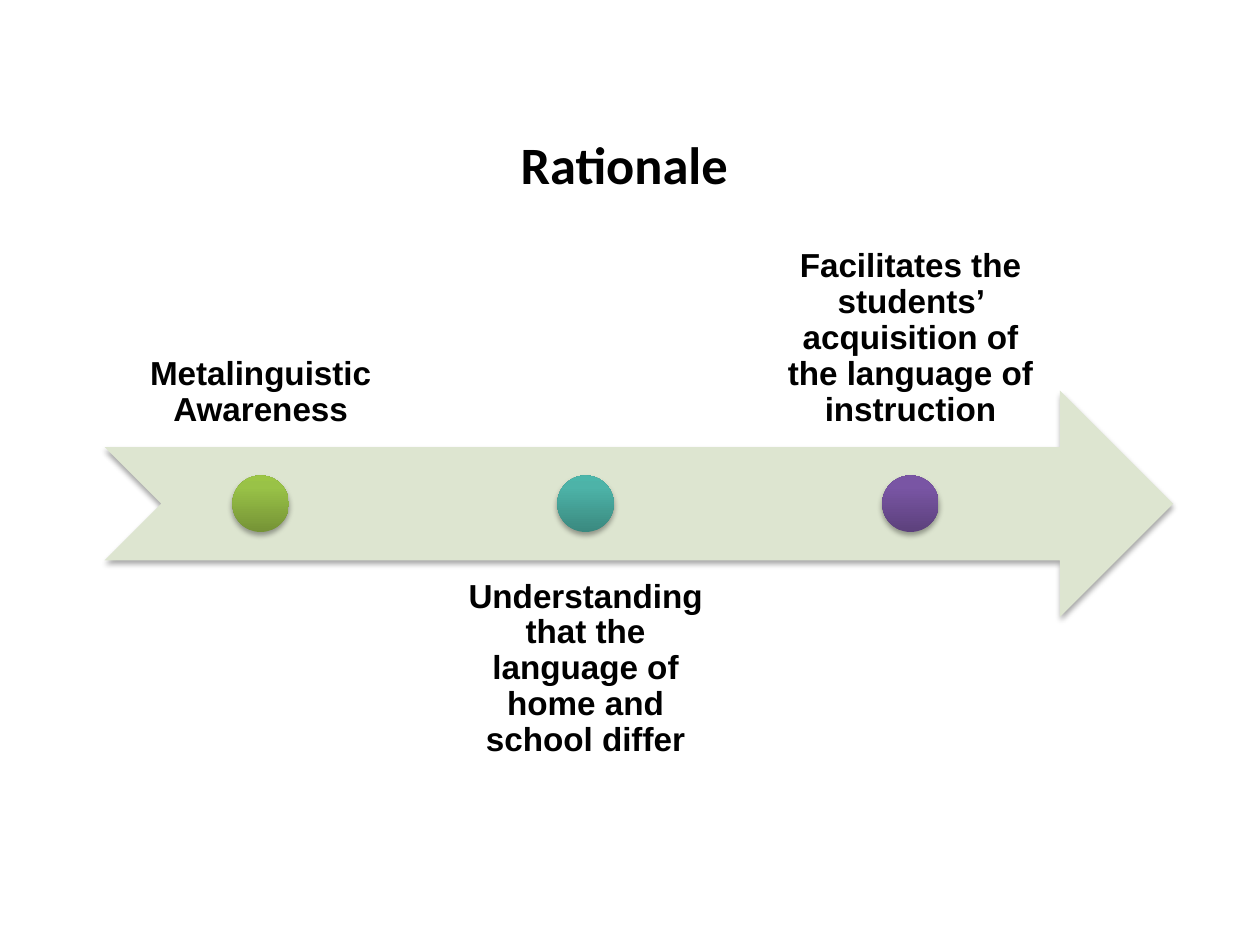
from copy import deepcopy
from dataclasses import dataclass

from lxml import etree
from pptx import Presentation
from pptx.dml.color import RGBColor
from pptx.enum.shapes import MSO_SHAPE as Shape
from pptx.enum.text import MSO_ANCHOR as Anchor, PP_ALIGN as Align
from pptx.oxml import parse_xml
from pptx.oxml.ns import nsdecls, qn
from pptx.util import Cm, Pt

BLACK = RGBColor(0x00, 0x00, 0x00)
ARROW_FILL = RGBColor(0xDD, 0xE5, 0xD0)
GREEN = (RGBColor(0x75, 0x93, 0x36), RGBColor(0x99, 0xC2, 0x47), RGBColor(0x9B, 0xC5, 0x45))
TEAL = (RGBColor(0x3A, 0x89, 0x7F), RGBColor(0x4D, 0xB3, 0xA8), RGBColor(0x4C, 0xB6, 0xAA))
PURPLE = (RGBColor(0x5C, 0x41, 0x7C), RGBColor(0x79, 0x55, 0xA4), RGBColor(0x79, 0x55, 0xA6))
STOPS = (0, 0.8, 1)

ARROW_LEFT, ARROW_TOP, ARROW_W, ARROW_H = 2.11, 7.87, 21.54, 4.57
LABEL_LEFT, LABEL_W, LABEL_H, LABEL_STEP = 2.13, 6.25, 4.57, 6.55
LABEL_ABOVE, LABEL_BELOW = 4.45, 11.3
DOT = 1.14

SHADOW = (
    f'<a:outerShdw {nsdecls("a")} blurRad="{Pt(3.1)}" dist="{Pt(1.8)}" dir="5400000"'
    ' rotWithShape="0"><a:srgbClr val="000000"><a:alpha val="35000"/></a:srgbClr></a:outerShdw>'
)


@dataclass
class Milestone:
    text: str
    colors: tuple[RGBColor, ...]
    above: bool


MILESTONES = [
    Milestone("Metalinguistic Awareness", GREEN, True),
    Milestone("Understanding that the language of home and school differ", TEAL, False),
    Milestone("Facilitates the students’ acquisition of the language of instruction", PURPLE, True),
]


def add_shadowed(s, kind: Shape, left: float, top: float, width: float, height: float):
    sp = s.shapes.add_shape(kind, Cm(left), Cm(top), Cm(width), Cm(height))
    sp.line.fill.background()
    sp.shadow.inherit = False
    effects: etree._Element = sp._element.spPr.find(qn("a:effectLst"))
    effects.append(parse_xml(SHADOW))
    return sp


def fill_gradient(sp, colors: tuple[RGBColor, ...]) -> None:
    """Fill from bottom to top, with one colour at each of STOPS."""
    sp.fill.gradient()
    sp.fill.gradient_angle = 90
    stop_list = sp._element.spPr.find(qn("a:gradFill")).find(qn("a:gsLst"))
    stop_list.append(deepcopy(stop_list[-1]))
    for stop, position, color in zip(sp.fill.gradient_stops, STOPS, colors):
        stop.position = position
        stop.color.rgb = color


def add_text(s, text: str, left: float, top: float, width: float, height: float,
             font: dict, frame: dict, spacing: float = 1.0) -> None:
    tf = s.shapes.add_textbox(Cm(left), Cm(top), Cm(width), Cm(height)).text_frame
    for name, value in {"word_wrap": True, **frame}.items():
        setattr(tf, name, value)
    p = tf.paragraphs[0]
    p.alignment, p.line_spacing = Align.CENTER, spacing
    r = p.add_run()
    r.text = text
    for name, value in {"bold": True, **font}.items():
        setattr(r.font, name, value)
    r.font.color.rgb = BLACK


def add_milestone(s, index: int, item: Milestone) -> None:
    left = LABEL_LEFT + index * LABEL_STEP
    sides = ("left", "top", "right", "bottom")
    frame = {f"margin_{side}": Cm(0.38) for side in sides}
    frame["vertical_anchor"] = Anchor.BOTTOM if item.above else Anchor.TOP
    add_text(s, item.text, left, LABEL_ABOVE if item.above else LABEL_BELOW,
             LABEL_W, LABEL_H, {"name": "Arial", "size": Pt(19)}, frame, 0.9)
    dot = add_shadowed(s, Shape.OVAL, left + (LABEL_W - DOT) / 2,
                       ARROW_TOP + (ARROW_H - DOT) / 2, DOT, DOT)
    fill_gradient(dot, item.colors)


def main() -> None:
    prs = Presentation()
    prs.slide_width, prs.slide_height = Cm(25.4), Cm(19.05)
    s = prs.slides.add_slide(prs.slide_layouts[6])

    arrow = add_shadowed(s, Shape.NOTCHED_RIGHT_ARROW, ARROW_LEFT, ARROW_TOP, ARROW_W, ARROW_H)
    arrow.fill.solid()
    arrow.fill.fore_color.rgb = ARROW_FILL
    for index, item in enumerate(MILESTONES):
        add_milestone(s, index, item)
    add_text(s, "Rationale", 2.74, 2.54, 19.69, 1.55, {"name": "Calibri", "size": Pt(30)}, {})

    prs.save("out.pptx")


if __name__ == "__main__":
    main()
